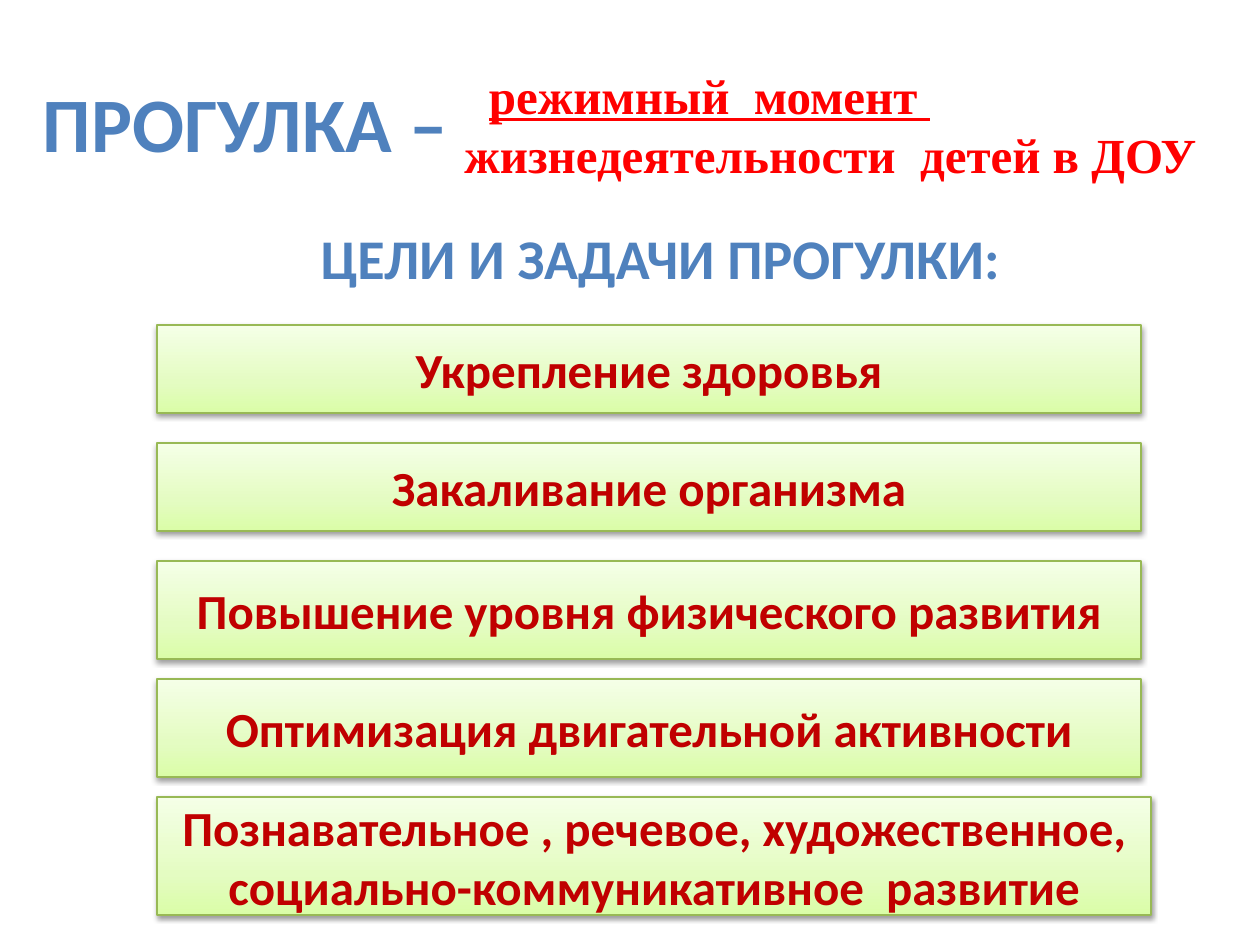
from copy import deepcopy
from dataclasses import dataclass

from lxml import etree
from pptx import Presentation, util as u
from pptx.dml.color import RGBColor
from pptx.enum import shapes, text
from pptx.oxml.ns import qn

PX = 914400 / 126


@dataclass(frozen=True)
class Theme:
    sans: str = "Calibri"
    serif: str = "Times New Roman"
    blue: str = "4F81BD"
    red: str = "FF0000"
    dark_red: str = "C00000"
    border: str = "98B955"
    gradient: tuple = ((0, "DAFDA7"), (0.35, "E4FCC2"), (1, "F5FFE7"))
    title: int = 44
    heading: int = 32
    body: int = 28


T = Theme()
CENTER, LEFT = text.PP_ALIGN.CENTER, text.PP_ALIGN.LEFT
GOALS = [
    (984, 88, ["Укрепление здоровья"]),
    (984, 88, ["Закаливание организма"]),
    (984, 98, ["Повышение уровня физического развития"]),
    (984, 98, ["Оптимизация двигательной активности"]),
    (994, 118, ["Познавательное , речевое, художественное,",
                "социально-коммуникативное  развитие"]),
]
GOAL_LEFT, GOAL_TOP, GOAL_STEP = 157, 325, 118


def px(*values):
    return [u.Emu(round(v * PX)) for v in values]


def write(tf, lines, font, size, color, align=CENTER):
    for i, line in enumerate(lines):
        p = tf.paragraphs[0] if i == 0 else tf.add_paragraph()
        p.alignment = align
        r = p.add_run()
        r.text = line
        for name, value in {"name": font, "size": u.Pt(size), "bold": True}.items():
            setattr(r.font, name, value)
        r.font.color.rgb = RGBColor.from_string(color)


def add_text(s, box, lines, font, size, color, align=CENTER, wrap=False):
    tf = s.shapes.add_textbox(*px(*box)).text_frame
    tf.word_wrap = wrap
    tf.auto_size = text.MSO_AUTO_SIZE.SHAPE_TO_FIT_TEXT
    write(tf, lines, font, size, color, align)
    return tf


def fill_gradient(sp, stops):
    """Fill from bottom to top with any number of stops."""
    sp.fill.gradient()
    sp.fill.gradient_angle = 90
    gs_list = sp.element.spPr.find(".//" + qn("a:gsLst"))
    while len(gs_list) < len(stops):
        gs_list.append(deepcopy(gs_list[0]))
    for stop, (position, color) in zip(sp.fill.gradient_stops, stops):
        stop.position = position
        stop.color.rgb = RGBColor.from_string(color)


def add_shadow(sp):
    sp.shadow.inherit = False
    effects = sp.element.spPr.find(qn("a:effectLst"))
    shadow = etree.SubElement(effects, qn("a:outerShdw"), blurRad="40000",
                              dist="20000", dir="5400000", rotWithShape="0")
    color = etree.SubElement(shadow, qn("a:srgbClr"), val="000000")
    etree.SubElement(color, qn("a:alpha"), val="38000")


def add_goal(s, box, lines):
    sp = s.shapes.add_shape(shapes.MSO_SHAPE.RECTANGLE, *px(*box))
    fill_gradient(sp, T.gradient)
    sp.line.color.rgb = RGBColor.from_string(T.border)
    sp.line.width = u.Pt(0.75)
    add_shadow(sp)
    tf = sp.text_frame
    tf.word_wrap = True
    tf.vertical_anchor = text.MSO_ANCHOR.MIDDLE
    write(tf, lines, T.sans, T.body, T.dark_red)


def main():
    prs = Presentation()
    prs.slide_width, prs.slide_height = u.Inches(10), u.Inches(7.5)
    s = prs.slides.add_slide(prs.slide_layouts[6])

    add_text(s, (29, 69, 433, 106), ["ПРОГУЛКА – "], T.sans, T.title, T.blue, wrap=True)
    tf = add_text(s, (452, 59, 765, 131),
                  ["режимный  момент ", "жизнедеятельности  детей в ДОУ"],
                  T.serif, T.body, T.red, LEFT)
    first = tf.paragraphs[0]
    first.runs[0].font.underline = True
    first._p.get_or_add_pPr().set("marL", str(u.Pt(14)))
    add_text(s, (305, 217, 711, 81), ["ЦЕЛИ И ЗАДАЧИ ПРОГУЛКИ:"],
             T.sans, T.heading, T.blue)

    for i, (width, height, lines) in enumerate(GOALS):
        add_goal(s, (GOAL_LEFT, GOAL_TOP + i * GOAL_STEP, width, height), lines)

    prs.save("out.pptx")


if __name__ == "__main__":
    main()
